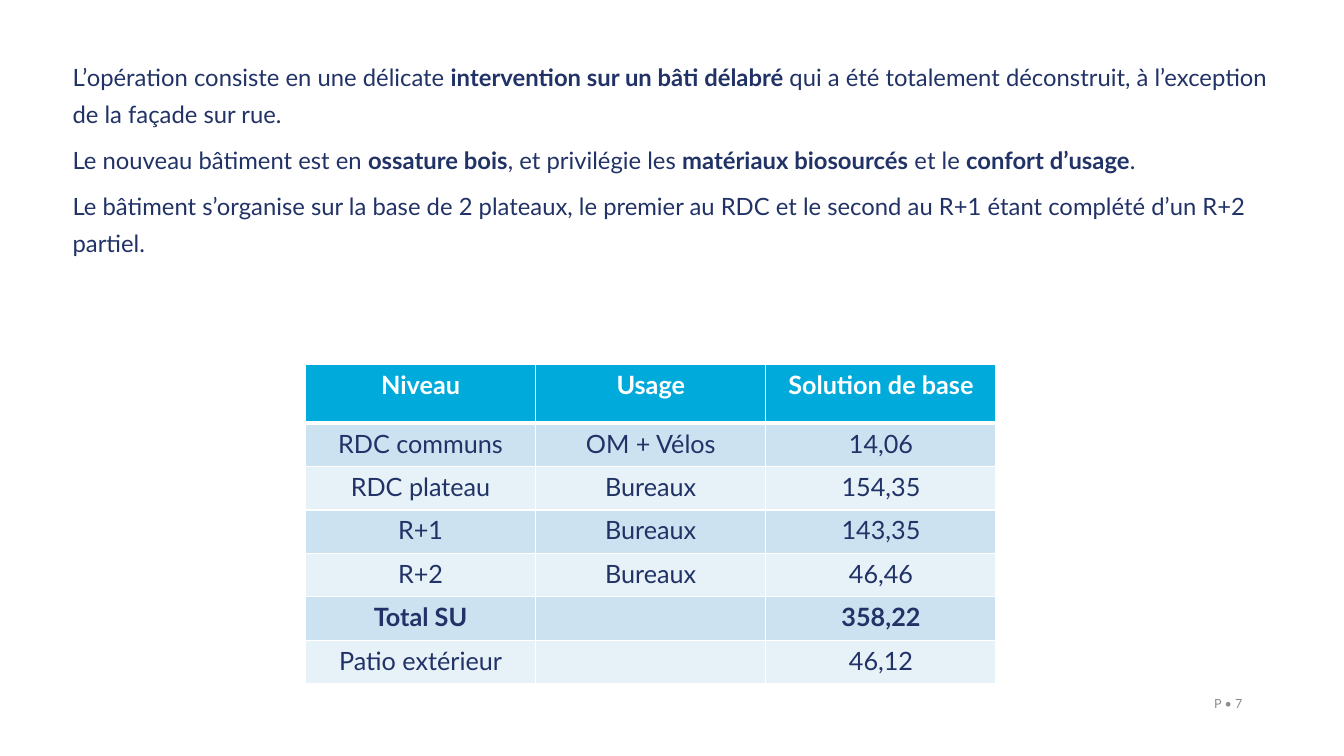
from lxml.etree import SubElement
from pptx import Presentation
from pptx.dml.color import RGBColor
from pptx.enum.text import MSO_ANCHOR as Anchor, MSO_AUTO_SIZE as AutoSize, PP_ALIGN as Align
from pptx.oxml.ns import qn
from pptx.util import Inches, Pt

NAVY, WHITE, GREY = "213266", "FFFFFF", "8C8C8C"
HEADER, BANDS = "00AADB", ("CCE2F1", "E7F1F8")

# Each paragraph is a list of (text, bold) spans
INTRO = [
    [("L’opération consiste en une délicate ", False),
     ("intervention sur un bâti délabré ", True),
     ("qui a été totalement déconstruit, à l’exception de la façade sur rue.", False)],
    [("Le nouveau bâtiment est en ", False), ("ossature bois", True),
     (", et privilégie les ", False), ("matériaux biosourcés", True),
     (" et le ", False), ("confort d’usage", True), (".", False)],
    [("Le bâtiment s’organise sur la base de 2 plateaux, le premier au RDC "
      "et le second au R+1 étant complété d’un R+2 partiel.", False)],
]
SURFACES = [
    ("Niveau", "Usage", "Solution de base"),
    ("RDC communs", "OM + Vélos", "14,06"),
    ("RDC plateau", "Bureaux", "154,35"),
    ("R+1", "Bureaux", "143,35"),
    ("R+2", "Bureaux", "46,46"),
    ("Total SU", "", "358,22"),
    ("Patio extérieur", "", "46,12"),
]
BOLD_ROWS = ("Niveau", "Total SU")


def color(hex_code):
    return RGBColor.from_string(hex_code)


class SlideBuilder:
    """Places elements on a grid of 100 columns by 100 rows."""
    font_name = "Lato"

    def __init__(self, deck, layout):
        self.deck = deck
        self.page = deck.slides.add_slide(layout)

    def across(self, columns):
        return round(self.deck.slide_width * columns / 100)

    def down(self, rows):
        return round(self.deck.slide_height * rows / 100)

    def area(self, left, top, width, height):
        return self.across(left), self.down(top), self.across(width), self.down(height)

    def style(self, para, size, hex_code, align, bold=None):
        para.alignment = align
        font = para.font
        font.name, font.size, font.bold = self.font_name, Pt(size), bold
        font.color.rgb = color(hex_code)

    def body(self, paragraphs, *area):
        box = self.page.placeholders[1]
        box.left, box.top, box.width, box.height = self.area(*area)
        frame = box.text_frame
        frame.auto_size = AutoSize.NONE
        for index, spans in enumerate(paragraphs):
            para = frame.paragraphs[0] if index == 0 else frame.add_paragraph()
            properties = para._p.get_or_add_pPr()
            properties.set("marL", "0")
            properties.set("indent", "0")
            SubElement(properties, qn("a:buNone"))
            para.line_spacing = 1.3
            para.space_before, para.space_after = Pt(0), Pt(6)
            self.style(para, 17, NAVY, Align.LEFT)
            for text, bold in spans:
                span = para.add_run()
                span.text, span.font.bold = text, bold

    def label(self, text, *area):
        frame = self.page.shapes.add_textbox(*self.area(*area)).text_frame
        frame.word_wrap = True
        frame.vertical_anchor = Anchor.MIDDLE
        para = frame.paragraphs[0]
        para.text = text
        self.style(para, 9, GREY, Align.RIGHT)

    def borders(self, cell, bottom):
        properties = cell._tc.get_or_add_tcPr()
        for side, width in (("L", 1), ("R", 1), ("T", 1), ("B", bottom)):
            line = SubElement(properties, qn(f"a:ln{side}"), w=str(Pt(width)))
            SubElement(SubElement(line, qn("a:solidFill")), qn("a:srgbClr"), val=WHITE)

    def table(self, rows, left, top, column_width, header_height, row_height):
        width = column_width * len(rows[0])
        height = header_height + row_height * (len(rows) - 1)
        area = self.area(left, top, width, height)
        table = self.page.shapes.add_table(len(rows), len(rows[0]), *area).table
        for column in table.columns:
            column.width = self.across(column_width)
        for index, texts in enumerate(rows):
            is_header = index == 0
            table.rows[index].height = self.down(header_height if is_header else row_height)
            fill = HEADER if is_header else BANDS[(index - 1) % 2]
            for cell, text in zip(table.rows[index].cells, texts):
                # The thick rule under the header is shared by the first row
                self.borders(cell, 3 if is_header else 1)
                if index == 1:
                    cell._tc.tcPr.find(qn("a:lnT")).set("w", str(Pt(3)))
                cell.fill.solid()
                cell.fill.fore_color.rgb = color(fill)
                para = cell.text_frame.paragraphs[0]
                if text:
                    para.text = text
                self.style(para, 18, WHITE if is_header else NAVY, Align.CENTER,
                           texts[0] in BOLD_ROWS)


def main():
    deck = Presentation()
    deck.slide_width, deck.slide_height = Inches(13.33), Inches(7.5)
    slide = SlideBuilder(deck, deck.slide_layouts[1])

    # This slide has no title
    title = slide.page.shapes.title.element
    title.getparent().remove(title)

    # Introduction
    slide.body(INTRO, 4.65, 6.53, 90.62, 40.27)

    # Page number
    slide.label("P • 7", 84.85, 90.4, 8.33, 5.33)

    # Floor areas
    slide.table(SURFACES, 22.73, 48.27, 17.13, 7.73, 5.74)

    deck.save("out.pptx")


if __name__ == "__main__":
    main()
